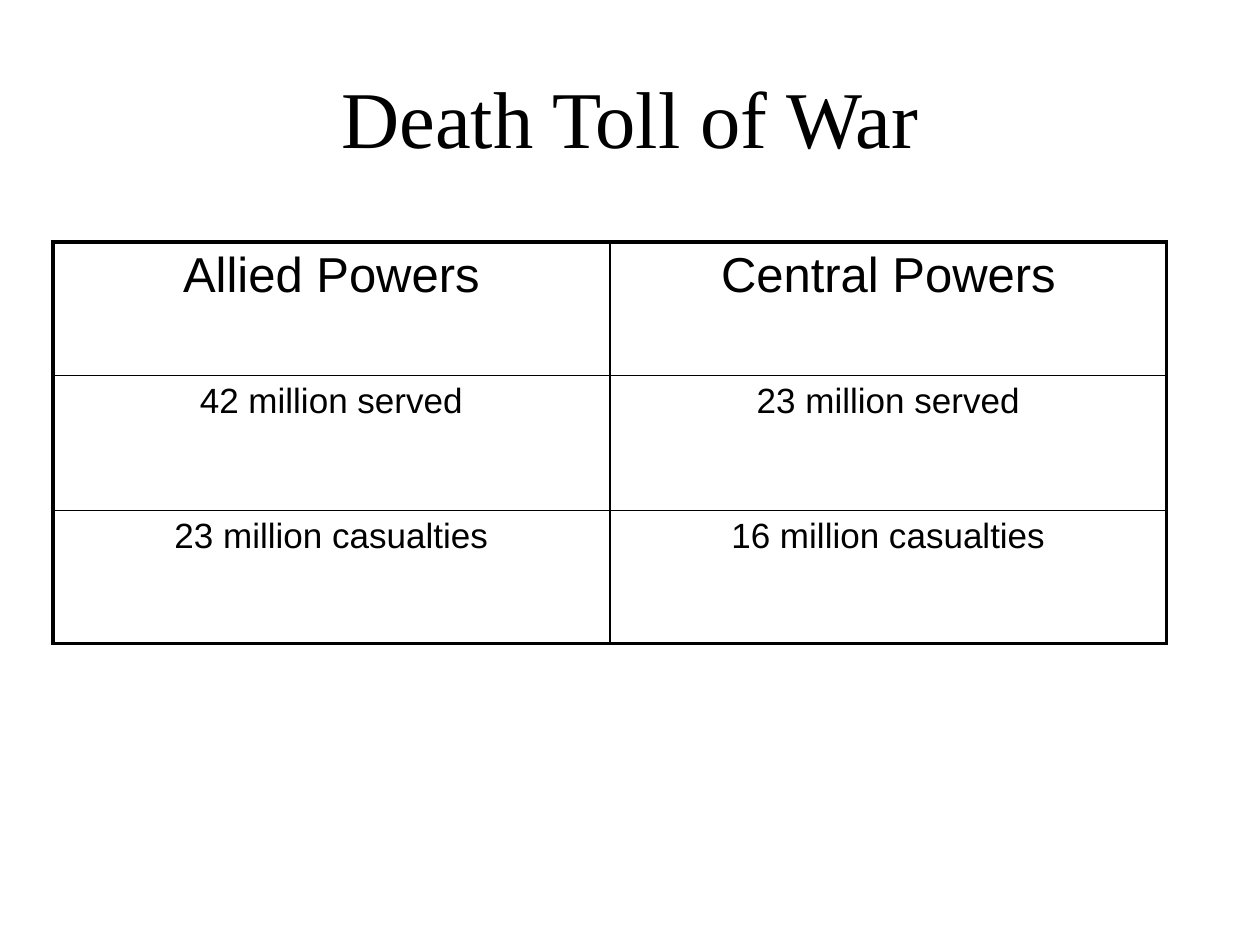
from typing import NamedTuple

from pptx import Presentation
from pptx.dml.color import RGBColor
from pptx.enum.text import MSO_ANCHOR, PP_ALIGN
from pptx.oxml import parse_xml
from pptx.oxml.ns import nsdecls
from pptx.util import Inches, Pt

BLACK = RGBColor(0x00, 0x00, 0x00)
WHITE = RGBColor(0xFF, 0xFF, 0xFF)
OUTER, INNER = 2.25, 1


class TollRow(NamedTuple):
    allied: str
    central: str
    size: int
    height: float


TOLL_ROWS = [
    TollRow("Allied Powers", "Central Powers", 28, 1.06),
    TollRow("42 million served", "23 million served", 20, 1.07),
    TollRow("23 million casualties", "16 million casualties", 20, 1.06),
]


def write_text(frame, text: str, *, size: int, font: str = "Arial",
               color: RGBColor = BLACK) -> None:
    para = frame.paragraphs[0]
    para.alignment = PP_ALIGN.CENTER
    span = para.add_run()
    span.text = text
    span.font.size = Pt(size)
    span.font.name = font
    span.font.color.rgb = color


def set_borders(cell, **widths: float) -> None:
    properties = cell._tc.get_or_add_tcPr()
    for side, width in widths.items():
        properties.append(parse_xml(
            f'<a:ln{side} {nsdecls("a")} w="{Pt(width)}">'
            f'<a:solidFill><a:srgbClr val="{BLACK}"/></a:solidFill>'
            f'</a:ln{side}>'))


def add_toll_table(page, rows: list[TollRow]) -> None:
    height = sum(row.height for row in rows)
    table = page.shapes.add_table(len(rows), 2, Inches(0.42), Inches(1.92),
                                  Inches(8.84), Inches(height)).table
    table.first_row = table.horz_banding = False
    last = len(rows) - 1
    for index, row in enumerate(rows):
        table.rows[index].height = Inches(row.height)
        for column, text in enumerate((row.allied, row.central)):
            cell = table.cell(index, column)
            write_text(cell.text_frame, text, size=row.size)
            set_borders(cell,
                        L=OUTER if column == 0 else INNER,
                        R=OUTER if column == 1 else INNER,
                        T=OUTER if index == 0 else INNER,
                        B=OUTER if index == last else INNER)
            cell.fill.background()


def main() -> None:
    deck = Presentation()
    deck.slide_width, deck.slide_height = Inches(10), Inches(7.5)
    page = deck.slides.add_slide(deck.slide_layouts[5])
    page.background.fill.solid()
    page.background.fill.fore_color.rgb = WHITE

    title = page.shapes.title
    title.left, title.top = Inches(0.5), Inches(0.3)
    title.width, title.height = Inches(9), Inches(1.25)
    title.text_frame.vertical_anchor = MSO_ANCHOR.MIDDLE
    write_text(title.text_frame, "Death Toll of War", size=46, font="Times New Roman")

    add_toll_table(page, TOLL_ROWS)
    deck.save("out.pptx")


if __name__ == "__main__":
    main()
